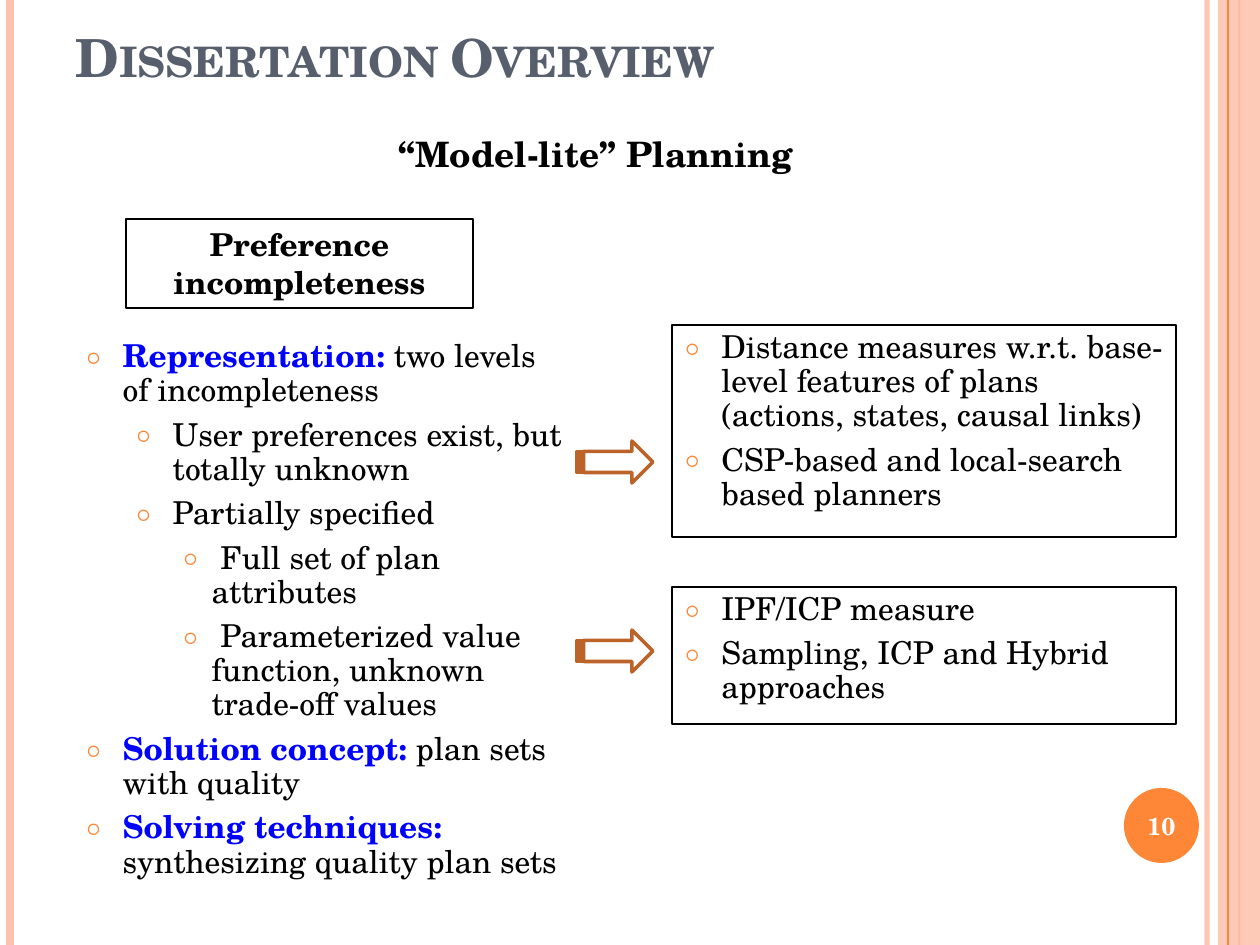
import pptx
import pptx.util
import pptx.dml.color
import pptx.enum.shapes
import pptx.enum.text
import pptx.oxml
import pptx.oxml.ns

RGB = pptx.dml.color.RGBColor
KIND = pptx.enum.shapes.MSO_SHAPE
ALIGN = pptx.enum.text.PP_ALIGN
ANCHOR = pptx.enum.text.MSO_ANCHOR

BLACK = RGB(0, 0, 0)
WHITE = RGB(255, 255, 255)
BLUE = RGB(0, 0, 255)
SLATE = RGB(0x57, 0x5F, 0x6D)
ORANGE = RGB(0xFE, 0x86, 0x37)
PEACH = RGB(0xFE, 0xC3, 0xAE)
BROWN = RGB(0xBC, 0x63, 0x29)
FONT = "TeX Gyre Schola"
SCALE = 914400 / 126

RULES = [
    (1207, PEACH, 3, 93),
    (10, PEACH, 4.5, 100),
    (1239, ORANGE, 1.5, 100),
]
EDGE = (1228, ORANGE, 0.75, 100)
POINTS = [
    (0, "Representation:", " two levels of incompleteness"),
    (1, "", "User preferences exist, but totally unknown"),
    (1, "", "Partially specified"),
    (2, "", " Full set of plan attributes"),
    (2, "", " Parameterized value function, unknown trade-off values"),
    (0, "Solution concept: ", "plan sets with quality"),
    (0, "Solving techniques: ", "synthesizing quality plan sets"),
]
INDENT = [(37, -37), (87, -37), (126, -29)]
BOXES = [
    (325, 212, 441, [
        "Distance measures w.r.t. base-level features of plans "
        "(actions, states, causal links)",
        "CSP-based and local-search based planners",
    ]),
    (587, 137, 630, [
        "IPF/ICP measure",
        "Sampling, ICP and Hybrid approaches",
    ]),
]


def px(num):
    return round(num * SCALE)


def node(xml):
    return pptx.oxml.parse_xml(
        xml.replace("/>", f' {pptx.oxml.ns.nsdecls("a")}/>', 1))


def fade(shape, alpha):
    if alpha < 100:
        color = shape._element.find(".//" + pptx.oxml.ns.qn("a:srgbClr"))
        color.append(node(f'<a:alpha val="{alpha * 1000}"/>'))


def write(para, text, size=18, color=BLACK, bold=False, align=None, small=False):
    run = para.add_run()
    run.text = text
    font = run.font
    font.name, font.size, font.bold = FONT, pptx.util.Pt(size), bold
    font.color.rgb = color
    if align is not None:
        para.alignment = align
    if small:
        run._r.get_or_add_rPr().set("cap", "small")


def place(shape, left, top, width, height):
    shape.left, shape.top = px(left), px(top)
    shape.width, shape.height = px(width), px(height)


def frame(shape, anchor=ANCHOR.TOP):
    text = shape.text_frame
    text.word_wrap = True
    text.auto_size = pptx.enum.text.MSO_AUTO_SIZE.NONE
    text.vertical_anchor = anchor
    return text


def draw(slide, kind, area, fill=None, line=None, width=1):
    shape = slide.shapes.add_shape(kind, *map(px, area))
    shape.shadow.inherit = False
    if fill is None:
        shape.fill.background()
    else:
        shape.fill.solid()
        shape.fill.fore_color.rgb = fill
    if line is None:
        shape.line.fill.background()
    else:
        shape.line.color.rgb = line
        shape.line.width = pptx.util.Pt(width)
    return shape


def rule(slide, left, color, width, alpha):
    line = slide.shapes.add_connector(
        pptx.enum.shapes.MSO_CONNECTOR.STRAIGHT, px(left), 0, px(left), px(945))
    line.line.color.rgb = color
    line.line.width = pptx.util.Pt(width)
    fade(line, alpha)
    line._element.spPr.append(node("<a:effectLst/>"))


def fill_list(text, items):
    for num, (level, lead, rest) in enumerate(items):
        para = text.add_paragraph() if num else text.paragraphs[0]
        para.level = level
        para.line_spacing = 0.9
        para.space_before = pptx.util.Pt(6)
        para.alignment = ALIGN.LEFT
        props = para._p.get_or_add_pPr()
        left, hang = INDENT[level]
        props.set("marL", str(px(left)))
        props.set("indent", str(px(hang)))
        color = node("<a:buClr/>")
        color.append(node(f'<a:srgbClr val="{ORANGE}"/>'))
        props.append(color)
        props.append(node('<a:buSzPct val="70000"/>'))
        props.append(node(f'<a:buFont typeface="{FONT}"/>'))
        props.append(node('<a:buChar char="○"/>'))
        if lead:
            write(para, lead, color=BLUE, bold=True)
        write(para, rest)


def main():
    deck = pptx.Presentation()
    deck.slide_width, deck.slide_height = px(1260), px(945)
    slide = deck.slides.add_slide(deck.slide_layouts[1])
    title, body = slide.placeholders

    for item in RULES:
        rule(slide, *item)
    band = draw(slide, KIND.RECTANGLE, (1218, 0, 42, 945), PEACH)
    fade(band, 87)
    rule(slide, *EDGE)

    badge = draw(slide, KIND.OVAL, (1124, 788, 75, 75), ORANGE)
    text = frame(badge, ANCHOR.MIDDLE)
    text.margin_left = text.margin_right = 0
    write(text.paragraphs[0], "10", size=14, color=WHITE, bold=True,
          align=ALIGN.CENTER)

    place(title, 63, 10, 1029, 84)
    write(frame(title, ANCHOR.BOTTOM).paragraphs[0], "Dissertation Overview",
          size=30, color=SLATE, bold=True, align=ALIGN.LEFT, small=True)

    head = slide.shapes.add_textbox(*map(px, (368, 126, 456, 55)))
    write(frame(head).paragraphs[0], "“Model-lite” Planning", size=20,
          bold=True, align=ALIGN.CENTER)

    topic = draw(slide, KIND.RECTANGLE, (126, 219, 347, 89), None, BLACK, 1.5)
    write(frame(topic).paragraphs[0], "Preference incompleteness", bold=True,
          align=ALIGN.CENTER)

    place(body, 73, 334, 504, 368)
    fill_list(frame(body), POINTS)

    for top, height, arrow, items in BOXES:
        draw(slide, KIND.STRIPED_RIGHT_ARROW, (577, arrow, 76, 42),
             WHITE, BROWN, 2)
        box = draw(slide, KIND.RECTANGLE, (672, top, 504, height),
                   WHITE, BLACK, 0.75)
        fill_list(frame(box), [(0, "", item) for item in items])

    deck.save("out.pptx")


if __name__ == "__main__":
    main()
